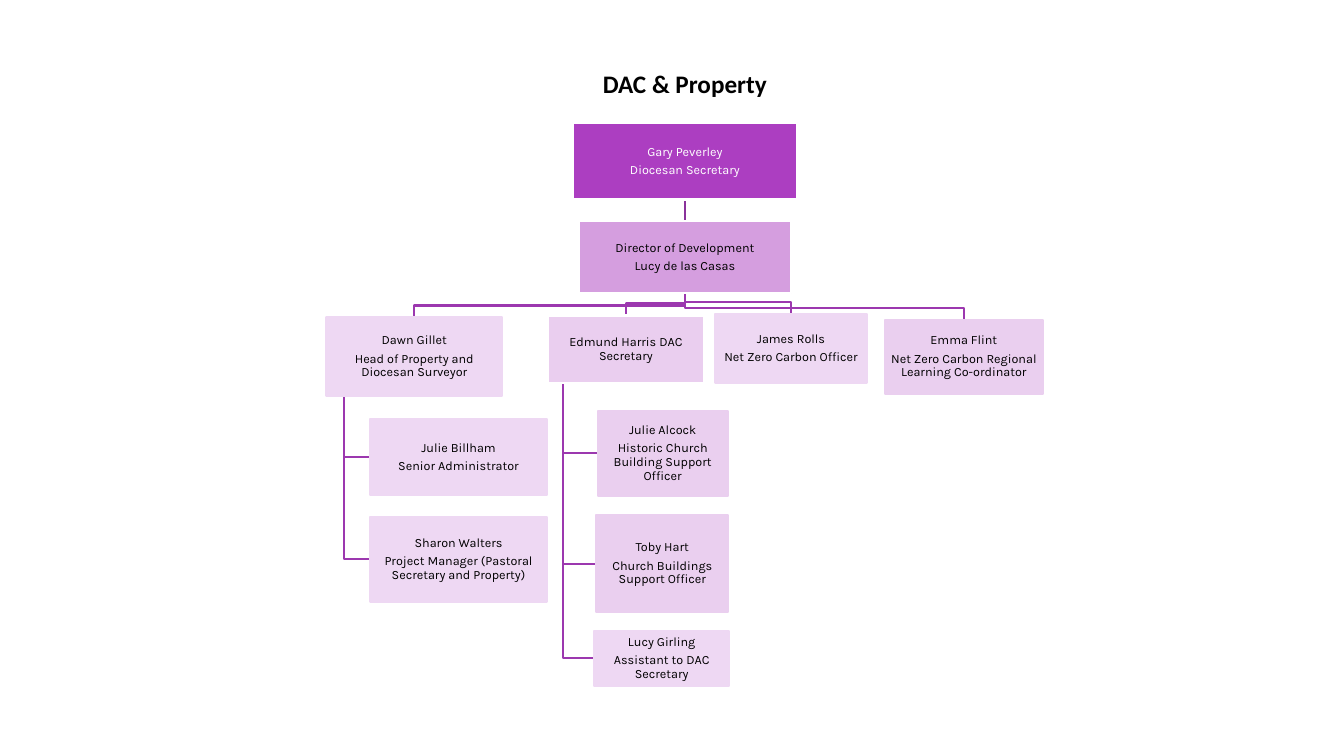
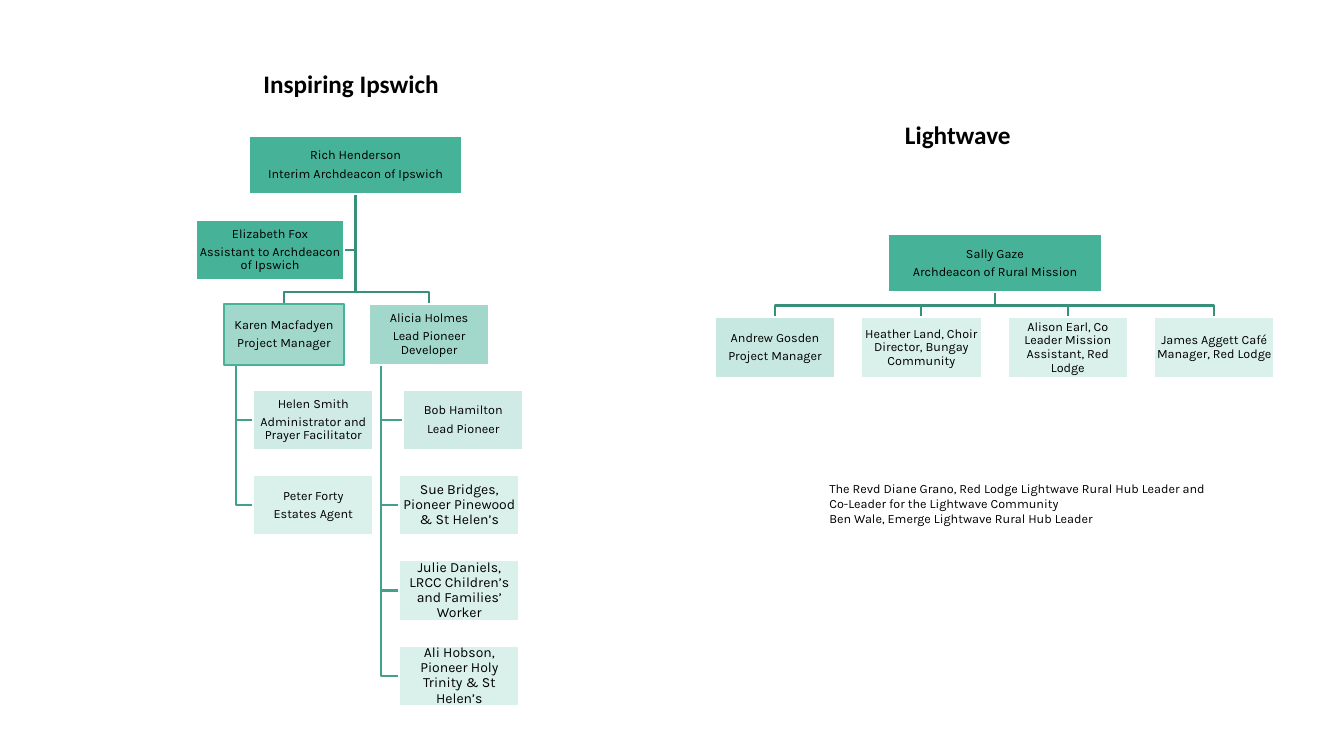
import dataclasses

import pptx
import pptx.dml.color
import pptx.enum.shapes
import pptx.enum.text
import pptx.oxml.ns
import pptx.util
from lxml import etree

Cm = pptx.util.Cm
Pt = pptx.util.Pt

COLOURS = {
    "black": "000000",
    "white": "FFFFFF",
    "purple": "AC3EC1",
    "lilac": "EACFEF",
    "pale lilac": "EED8F3",
    "purple link": "8A329B",
    "lower purple link": "9C38AF",
    "green": "46B298",
    "mint": "8ED3C2",
    "pale mint": "D9F0EB",
    "green link": "388F7A",
    "lower green link": "40A28A",
}
PURPLE_LINKS = ("purple link", "lower purple link")
GREEN_LINKS = ("green link", "lower green link")


def colour(name):
    return pptx.dml.color.RGBColor.from_string(COLOURS[name])


def write(frame, lines, font="Karla", size=9, ink="black", bold=False,
          align="LEFT", spacing=None, after=0):
    """Fill a text frame with one paragraph per line."""
    frame.word_wrap = True
    for index, line in enumerate(lines):
        paragraph = frame.paragraphs[0] if index == 0 else frame.add_paragraph()
        paragraph.alignment = getattr(pptx.enum.text.PP_ALIGN, align)
        paragraph.line_spacing = spacing
        paragraph.space_after = Pt(after)
        run = paragraph.add_run()
        run.text = line
        run.font.name = font
        run.font.size = Pt(size)
        run.font.bold = bold
        run.font.color.rgb = colour(ink)


@dataclasses.dataclass
class Post:
    """A box of the chart in cm, with the posts that report to it."""
    left: float
    top: float
    width: float
    height: float
    lines: tuple
    fill: str
    alpha: int = 100
    outline: str = "white"
    ink: str = "black"
    size: int = 9
    row: tuple = ()
    listed: tuple = ()
    assistants: tuple = ()

    @property
    def centre(self):
        return self.left + self.width / 2

    @property
    def middle(self):
        return self.top + self.height / 2

    @property
    def right(self):
        return self.left + self.width

    @property
    def bottom(self):
        return self.top + self.height


class OrgChart:
    LINE = Pt(1.5)
    INSET = Cm(0.03)
    BEND = 0.3  # cm between a horizontal link and the row below it

    def __init__(self):
        self.deck = pptx.Presentation()
        self.deck.slide_width = Cm(33.87)
        self.deck.slide_height = Cm(19.05)
        self.slide = None

    def new_slide(self):
        self.slide = self.deck.slides.add_slide(self.deck.slide_layouts[6])

    def text(self, left, top, width, height, lines, **style):
        area = self.slide.shapes.add_textbox(Cm(left), Cm(top), Cm(width), Cm(height))
        write(area.text_frame, lines, **style)

    def title(self, left, top, wording):
        self.text(left, top, 17.7, 1.04, [wording], font="Calibri", size=18,
                  bold=True, align="CENTER")

    def box(self, post):
        box = self.slide.shapes.add_shape(
            pptx.enum.shapes.MSO_SHAPE.RECTANGLE,
            Cm(post.left), Cm(post.top), Cm(post.width), Cm(post.height))
        box.shadow.inherit = False
        box.fill.solid()
        box.fill.fore_color.rgb = colour(post.fill)
        if post.alpha < 100:
            tint = box._element.spPr.find(".//" + pptx.oxml.ns.qn("a:srgbClr"))
            etree.SubElement(tint, pptx.oxml.ns.qn("a:alpha"), val=str(post.alpha * 1000))
        box.line.color.rgb = colour(post.outline)
        box.line.width = self.LINE
        frame = box.text_frame
        frame.margin_left = frame.margin_right = self.INSET
        frame.margin_top = frame.margin_bottom = self.INSET
        frame.vertical_anchor = pptx.enum.text.MSO_ANCHOR.MIDDLE
        write(frame, post.lines, size=post.size, ink=post.ink, align="CENTER",
              spacing=0.9, after=3.2)

    def straight(self, x, top, bottom, link):
        line = self.slide.shapes.add_connector(
            pptx.enum.shapes.MSO_CONNECTOR.STRAIGHT, Cm(x), Cm(top), Cm(x), Cm(bottom))
        line.line.color.rgb = colour(link)
        line.line.width = self.LINE
        etree.SubElement(line._element.spPr, pptx.oxml.ns.qn("a:effectLst"))

    def elbow(self, points, link):
        start, *others = [(Cm(x), Cm(y)) for x, y in points]
        builder = self.slide.shapes.build_freeform(*start)
        builder.add_line_segments(others, close=False)
        line = builder.convert_to_shape()
        line.shadow.inherit = False
        line.fill.background()
        line.line.color.rgb = colour(link)
        line.line.width = self.LINE

    def links(self, post, link):
        for child in post.row:
            if abs(child.centre - post.centre) < 0.05:
                self.straight(post.centre, post.bottom, child.top, link)
            else:
                bend = child.top - self.BEND
                self.elbow([(post.centre, post.bottom), (post.centre, bend),
                            (child.centre, bend), (child.centre, child.top)], link)
        stem = post.left + post.width / 10
        for child in post.listed:
            self.elbow([(stem, post.bottom), (stem, child.middle),
                        (child.left, child.middle)], link)
        for child in post.assistants:
            self.elbow([(post.centre, post.bottom), (post.centre, child.middle),
                        (child.right, child.middle)], link)

    def tree(self, post, links):
        """Draw a post over its links, then all that report to it."""
        self.links(post, links[0])
        self.box(post)
        for child in (*post.row, *post.listed, *post.assistants):
            self.tree(child, links[1:] or links)


def property_slide(chart):
    chart.new_slide()
    surveyor = Post(
        8.23, 8, 4.42, 1.98, ("Dawn Gillet", "Head of Property and Diocesan Surveyor"),
        "pale lilac", outline="pale lilac", listed=(
            Post(9.32, 10.57, 4.47, 1.9, ("Julie Billham", "Senior Administrator"),
                 "pale lilac", outline="pale lilac"),
            Post(9.32, 13.03, 4.47, 2.13,
                 ("Sharon Walters", "Project Manager (Pastoral Secretary and Property)"),
                 "pale lilac", outline="pale lilac"),
        ))
    dac_secretary = Post(
        13.8, 7.95, 3.95, 1.7, ("Edmund Harris DAC Secretary",), "purple", alpha=25, listed=(
            Post(15.06, 10.36, 3.28, 2.13,
                 ("Julie Alcock", "Historic Church Building Support Officer"),
                 "lilac", outline="lilac"),
            Post(15.03, 12.98, 3.32, 2.45, ("Toby Hart", "Church Buildings Support Officer"),
                 "lilac", outline="lilac"),
            Post(14.97, 15.9, 3.41, 1.38, ("Lucy Girling", "Assistant to DAC Secretary"),
                 "pale lilac", outline="pale lilac"),
        ))
    carbon_officer = Post(18.03, 7.92, 3.81, 1.72, ("James Rolls", "Net Zero Carbon Officer"),
                          "pale lilac", outline="pale lilac")
    carbon_learning = Post(22.3, 8.06, 3.98, 1.86,
                           ("Emma Flint", "Net Zero Carbon Regional Learning Co-ordinator"),
                           "lilac", outline="lilac")
    director = Post(14.58, 5.57, 5.36, 1.82, ("Director of Development", "Lucy de las Casas"),
                    "purple", alpha=50,
                    row=(surveyor, dac_secretary, carbon_officer, carbon_learning))
    chart.tree(Post(14.43, 3.1, 5.66, 1.93, ("Gary Peverley", "Diocesan Secretary"),
                    "purple", ink="white", row=(director,)), PURPLE_LINKS)
    chart.title(8.41, 1.6, "DAC & Property")


def ipswich_chart(chart):
    def member(left, level, lines, fill="pale mint", **style):
        """Place a post on one of the evenly spaced levels."""
        return Post(left, 7.67 + 2.15 * level, 3.03, 1.52, lines, fill, **style)

    project_manager = member(
        5.64, 0, ("Karen Macfadyen", "Project Manager"), "green", alpha=50, outline="green",
        listed=(
            member(6.38, 1, ("Helen Smith", "Administrator and Prayer Facilitator"),
                   "green", alpha=25),
            member(6.38, 2, ("Peter Forty", "Estates Agent")),
        ))
    pioneers = (
        "Sue Bridges, Pioneer Pinewood & St Helen’s",
        "Julie Daniels, LRCC Children’s and Families’ Worker",
        "Ali Hobson, Pioneer Holy Trinity & St Helen’s",
    )
    lead_developer = member(
        9.3, 0, ("Alicia Holmes", "Lead Pioneer Developer"), "green", alpha=50,
        listed=(
            member(10.16, 1, ("Bob Hamilton", "Lead Pioneer"), "green", alpha=25),
            *(member(10.06, level, (pioneer,), size=10)
              for level, pioneer in enumerate(pioneers, 2)),
        ))
    assistant = Post(4.95, 5.54, 3.71, 1.52,
                     ("Elizabeth Fox", "Assistant to Archdeacon of Ipswich"), "green")
    chart.tree(Post(6.27, 3.43, 5.38, 1.45, ("Rich Henderson", "Interim Archdeacon of Ipswich"),
                    "green", row=(project_manager, lead_developer),
                    assistants=(assistant,)), GREEN_LINKS)
    chart.title(0, 1.6, "Inspiring Ipswich")


def lightwave_chart(chart):
    team = (
        ("Andrew Gosden", "Project Manager"),
        ("Heather Land, Choir Director, Bungay Community",),
        ("Alison Earl, Co Leader Mission Assistant, Red Lodge",),
        ("James Aggett Café Manager, Red Lodge",),
    )
    row = tuple(Post(18.01 + 3.69 * column, 8, 3.04, 1.52, lines, "pale mint")
                for column, lines in enumerate(team))
    row[0].fill, row[0].alpha = "mint", 50
    chart.tree(Post(22.37, 5.89, 5.41, 1.48, ("Sally Gaze", "Archdeacon of Rural Mission"),
                    "green", row=row), GREEN_LINKS)
    chart.title(15.29, 2.87, "Lightwave")
    chart.text(20.65, 11.99, 10.11, 2.95, (
        "The Revd Diane Grano, Red Lodge Lightwave Rural Hub Leader and "
        "Co-Leader for the Lightwave Community",
        "Ben Wale, Emerge Lightwave Rural Hub Leader",
    ))


def main():
    chart = OrgChart()
    property_slide(chart)
    chart.new_slide()
    ipswich_chart(chart)
    lightwave_chart(chart)
    chart.deck.save("out.pptx")


if __name__ == "__main__":
    main()
